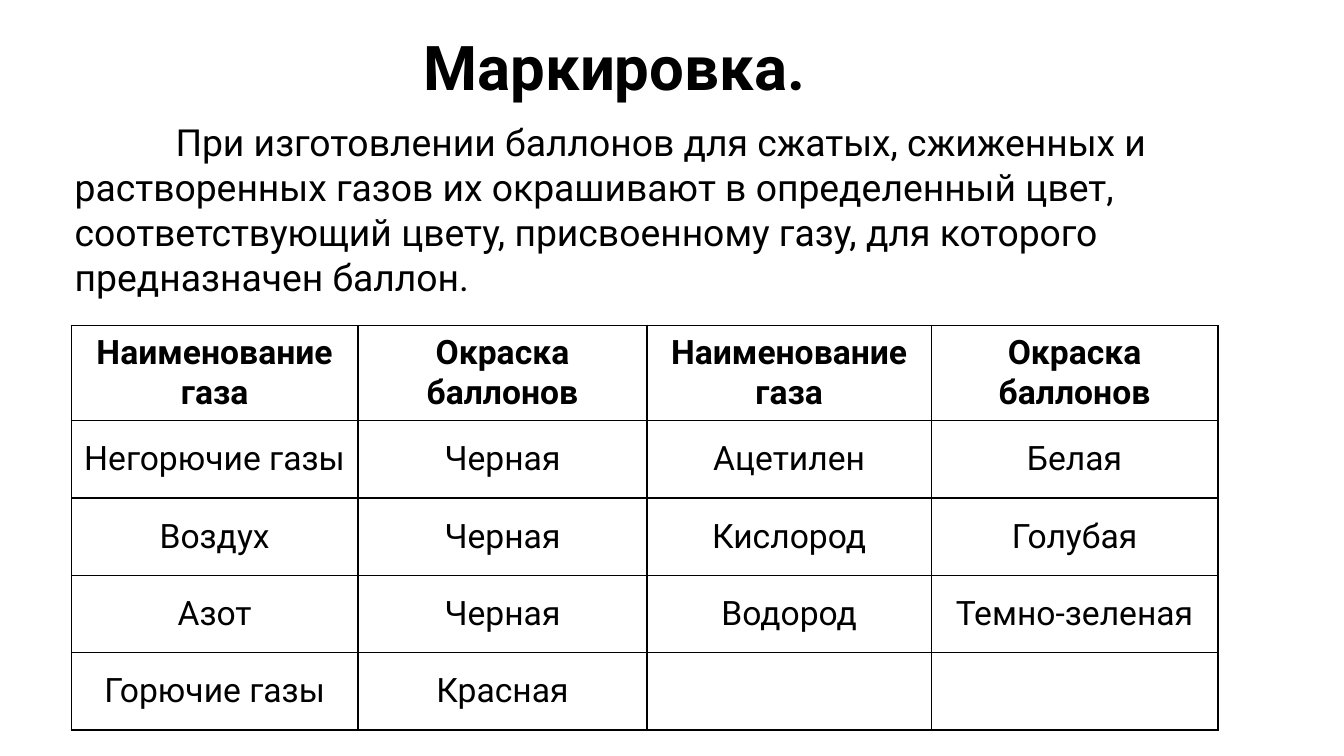
from dataclasses import dataclass

from lxml.etree import SubElement
from pptx import Presentation
from pptx.dml.color import RGBColor
from pptx.enum.text import MSO_ANCHOR, PP_ALIGN
from pptx.oxml import parse_xml
from pptx.oxml.ns import nsdecls
from pptx.slide import Slide
from pptx.table import _Cell
from pptx.text.text import _Paragraph
from pptx.util import Inches, Length, Pt

WIDTH, HEIGHT = Inches(11.11), Inches(6.25)
FONT = "Roboto"
COLOURS = {"ink": "000000", "paper": "FFFFFF"}
COLUMN_WIDTHS = [21.33, 21.51, 21.15, 21.33]
ROW_HEIGHTS = [12.32] + [10.24] * 4
CELL_MARGIN = Inches(0.06)
GASES = [
    ["Наименование газа", "Окраска баллонов"] * 2,
    ["Негорючие газы", "Черная", "Ацетилен", "Белая"],
    ["Воздух", "Черная", "Кислород", "Голубая"],
    ["Азот", "Черная", "Водород", "Темно-зеленая"],
    ["Горючие газы", "Красная", "", ""],
]


@dataclass(frozen=True)
class TextBlock:
    text: str
    left: float
    top: float
    width: float
    height: float
    size: float
    bold: bool = False
    alignment: PP_ALIGN = PP_ALIGN.LEFT
    anchor: MSO_ANCHOR = MSO_ANCHOR.TOP
    line_spacing: float = 1.0
    left_margin: float = 0.0
    first_indent: float = 0.0


TEXT_BLOCKS = [
    TextBlock("Маркировка.", 6.03, 3.52, 79.39, 11.52, 36.7, True,
              PP_ALIGN.CENTER, MSO_ANCHOR.MIDDLE, 0.9),
    TextBlock("При изготовлении баллонов для сжатых, сжиженных и растворенных "
              "газов их окрашивают в определенный цвет, соответствующий цвету, "
              "присвоенному газу, для которого предназначен баллон.",
              2.79, 15.04, 92.17, 23.84, 22.2, left_margin=1.89, first_indent=7.5),
]


def columns(count: float) -> Length:
    return Length(round(WIDTH * count / 100))


def rows(count: float) -> Length:
    return Length(round(HEIGHT * count / 100))


def format_runs(paragraph: _Paragraph, size: float, bold: bool) -> None:
    for run in paragraph.runs:
        run.font.name = FONT
        run.font.size = Pt(size)
        run.font.bold = bold
        run.font.color.rgb = RGBColor.from_string(COLOURS["ink"])


def draw_text(slide: Slide, block: TextBlock) -> None:
    shape = slide.shapes.add_textbox(columns(block.left), rows(block.top),
                                     columns(block.width), rows(block.height))
    text_frame = shape.text_frame
    text_frame.word_wrap = True
    text_frame.vertical_anchor = block.anchor
    text_frame.text = block.text
    paragraph = text_frame.paragraphs[0]
    paragraph.alignment = block.alignment
    paragraph.line_spacing = block.line_spacing
    properties = paragraph._p.get_or_add_pPr()
    properties.set("marL", str(columns(block.left_margin)))
    properties.set("indent", str(columns(block.first_indent)))
    format_runs(paragraph, block.size, block.bold)


def draw_borders(cell: _Cell) -> None:
    properties = cell._tc.get_or_add_tcPr()
    for index, side in enumerate(("lnL", "lnR", "lnT", "lnB")):
        border = parse_xml(f'<a:{side} {nsdecls("a")} w="{Pt(1)}"><a:solidFill/></a:{side}>')
        SubElement(border[0], border[0].tag.replace("solidFill", "srgbClr"),
                   val=COLOURS["ink"])
        properties.insert(index, border)


def draw_cell(cell: _Cell, text: str, bold: bool) -> None:
    cell.fill.background()
    cell.margin_left = cell.margin_right = CELL_MARGIN
    cell.margin_top = cell.margin_bottom = CELL_MARGIN
    cell.vertical_anchor = MSO_ANCHOR.MIDDLE
    cell.text_frame.text = text
    paragraph = cell.text_frame.paragraphs[0]
    paragraph.alignment = PP_ALIGN.CENTER
    format_runs(paragraph, 20, bold)
    draw_borders(cell)


def draw_table(slide: Slide) -> None:
    shape = slide.shapes.add_table(len(ROW_HEIGHTS), len(COLUMN_WIDTHS),
                                   columns(5.31), rows(43.04),
                                   columns(sum(COLUMN_WIDTHS)), rows(sum(ROW_HEIGHTS)))
    table = shape.table
    table.horz_banding = False
    for column, width in zip(table.columns, COLUMN_WIDTHS):
        column.width = columns(width)
    for row_index, (row, height) in enumerate(zip(table.rows, ROW_HEIGHTS)):
        row.height = rows(height)
        for cell, text in zip(row.cells, GASES[row_index]):
            draw_cell(cell, text, bold=row_index == 0)


def main() -> None:
    presentation = Presentation()
    presentation.slide_width, presentation.slide_height = WIDTH, HEIGHT
    slide = presentation.slides.add_slide(presentation.slide_layouts[6])
    slide.background.fill.solid()
    slide.background.fill.fore_color.rgb = RGBColor.from_string(COLOURS["paper"])
    for block in TEXT_BLOCKS:
        draw_text(slide, block)
    draw_table(slide)
    presentation.save("out.pptx")


if __name__ == "__main__":
    main()
